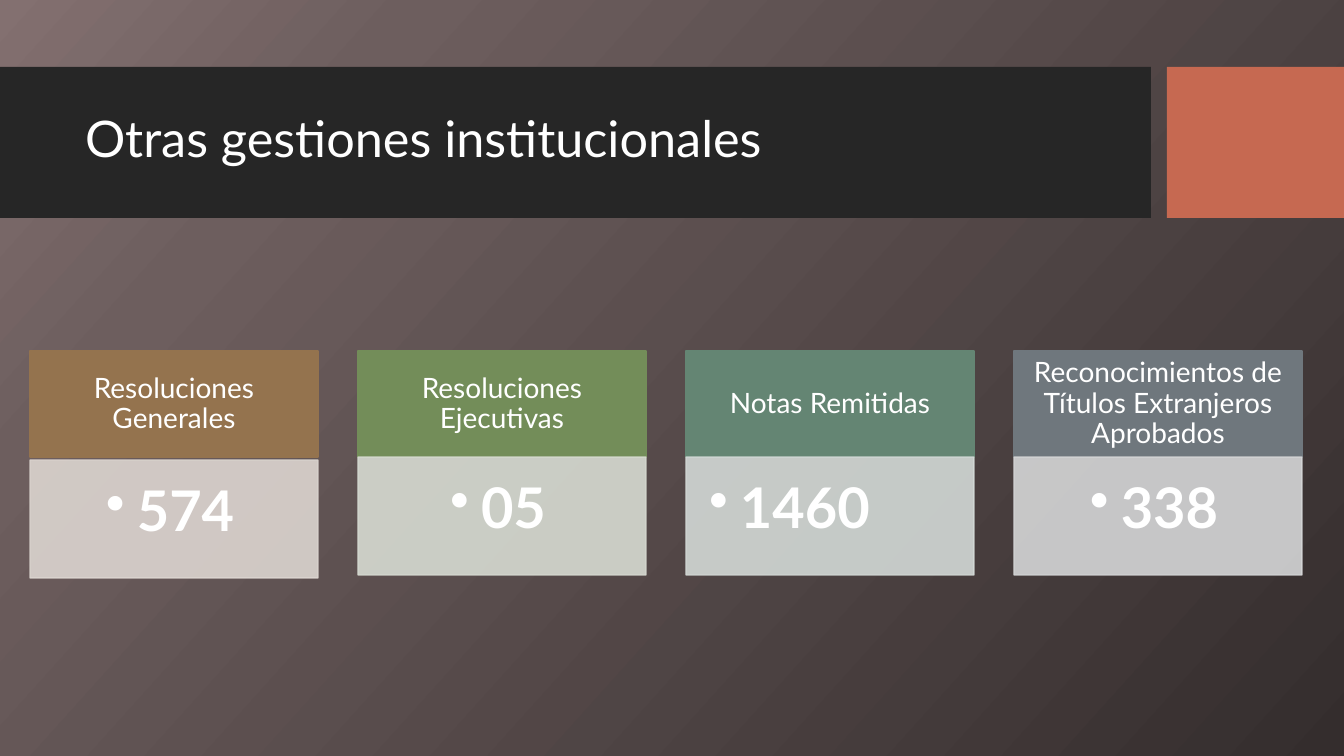
from pptx import Presentation
from pptx.dml.color import RGBColor
from pptx.enum.shapes import MSO_SHAPE
from pptx.enum.text import MSO_ANCHOR, PP_ALIGN
from pptx.oxml import parse_xml
from pptx.oxml.ns import nsdecls, qn
from pptx.util import Emu, Pt
from lxml.etree import SubElement

TITLE = "Otras gestiones institucionales"
CARDS = [
    {"label": "Resoluciones Generales", "value": "574", "head": "brown", "body": "brown_pale", "drop": 3},
    {"label": "Resoluciones Ejecutivas", "value": "05", "head": "green", "body": "green_pale"},
    {"label": "Notas Remitidas", "value": "1460", "head": "teal", "body": "teal_pale", "align": PP_ALIGN.LEFT},
    {"label": "Reconocimientos de Títulos Extranjeros Aprobados", "value": "338", "head": "slate", "body": "slate_pale"},
]
COLORS = {
    "white": "FFFFFF", "band": "262626", "accent": "C66951",
    "brown": "94734E", "brown_pale": "DCD5D0",
    "green": "738D59", "green_pale": "D7DBD2",
    "teal": "648573", "teal_pale": "D3D9D6",
    "slate": "6F777D", "slate_pale": "D5D6D7",
}
BACKDROP = [(0, "837070"), (21, "6D5E5E"), (100, "342D2D")]
BACKDROP_ANGLE = 42
FONT = "Lato"
CARD_X, CARD_Y, CARD_W, CARD_PITCH = 30, 351, 288, 328
HEAD_H, BODY_H, BULLET_INDENT = 106, 118, 31


def px(n):
    return Emu(round(n * 914400 / 100.8))


def color(name):
    return RGBColor.from_string(COLORS[name])


def paint_background(s):
    s.background.fill.solid()
    bg = s.element.find(".//" + qn("p:bgPr"))
    stops = "".join(
        f'<a:gs pos="{pos * 1000}"><a:srgbClr val="{rgb}"/></a:gs>' for pos, rgb in BACKDROP
    )
    bg.replace(bg[0], parse_xml(
        f'<a:gradFill {nsdecls("a")} rotWithShape="1"><a:gsLst>{stops}</a:gsLst>'
        f'<a:lin ang="{BACKDROP_ANGLE * 60000}" scaled="0"/></a:gradFill>'
    ))


def add_rect(s, box, fill, outlined=False, alpha=None):
    sp = s.shapes.add_shape(MSO_SHAPE.RECTANGLE, *map(px, box))
    sp.shadow.inherit = False
    sp.fill.solid()
    sp.fill.fore_color.rgb = color(fill)
    if outlined:
        sp.line.color.rgb = color(fill)
        sp.line.width = Pt(1)
    else:
        sp.line.fill.background()
    if alpha:
        for clr in sp.element.spPr.iter(qn("a:srgbClr")):
            SubElement(clr, qn("a:alpha"), val=str(alpha * 1000))
    return sp


def write(sp, text, size, insets, anchor, align, bold=False, bullet=False):
    tf = sp.text_frame
    tf.word_wrap = True
    tf.vertical_anchor = anchor
    tf.margin_left, tf.margin_top, tf.margin_right, tf.margin_bottom = map(px, insets)
    p = tf.paragraphs[0]
    p.alignment = align
    p.line_spacing = 0.9
    if bullet:
        pPr = p._p.get_or_add_pPr()
        pPr.set("marL", str(px(BULLET_INDENT)))
        pPr.set("indent", str(-px(BULLET_INDENT)))
        SubElement(pPr, qn("a:buChar"), char="•")
    r = p.add_run()
    r.text = text
    r.font.name = FONT
    r.font.size = Pt(size)
    r.font.bold = bold
    r.font.color.rgb = color("white")


def add_card(s, i, card):
    x = CARD_X + i * CARD_PITCH
    head = add_rect(s, (x, CARD_Y, CARD_W, HEAD_H), card["head"], outlined=True)
    write(head, card["label"], 20, (16, 9, 16, 9), MSO_ANCHOR.MIDDLE, PP_ALIGN.CENTER)
    y = CARD_Y + HEAD_H + card.get("drop", 0)
    body = add_rect(s, (x, y, CARD_W, BODY_H), card["body"], outlined=True, alpha=90)
    write(body, card["value"], 40, (23, 23, 31, 35), MSO_ANCHOR.TOP,
          card.get("align", PP_ALIGN.CENTER), bold=True, bullet=True)


def main():
    """Build the slide of institutional figures."""
    prs = Presentation()
    prs.slide_width, prs.slide_height = px(1344), px(756)
    s = prs.slides.add_slide(prs.slide_layouts[6])
    paint_background(s)
    add_rect(s, (0, 67, 1151, 151), "band")
    add_rect(s, (1167, 67, 177, 151), "accent")
    title = s.shapes.add_textbox(*map(px, (75, 82, 1059, 119)))
    write(title, TITLE, 36, (10, 5, 10, 5), MSO_ANCHOR.MIDDLE, PP_ALIGN.LEFT)
    for i, card in enumerate(CARDS):
        add_card(s, i, card)
    prs.save("out.pptx")


if __name__ == "__main__":
    main()
